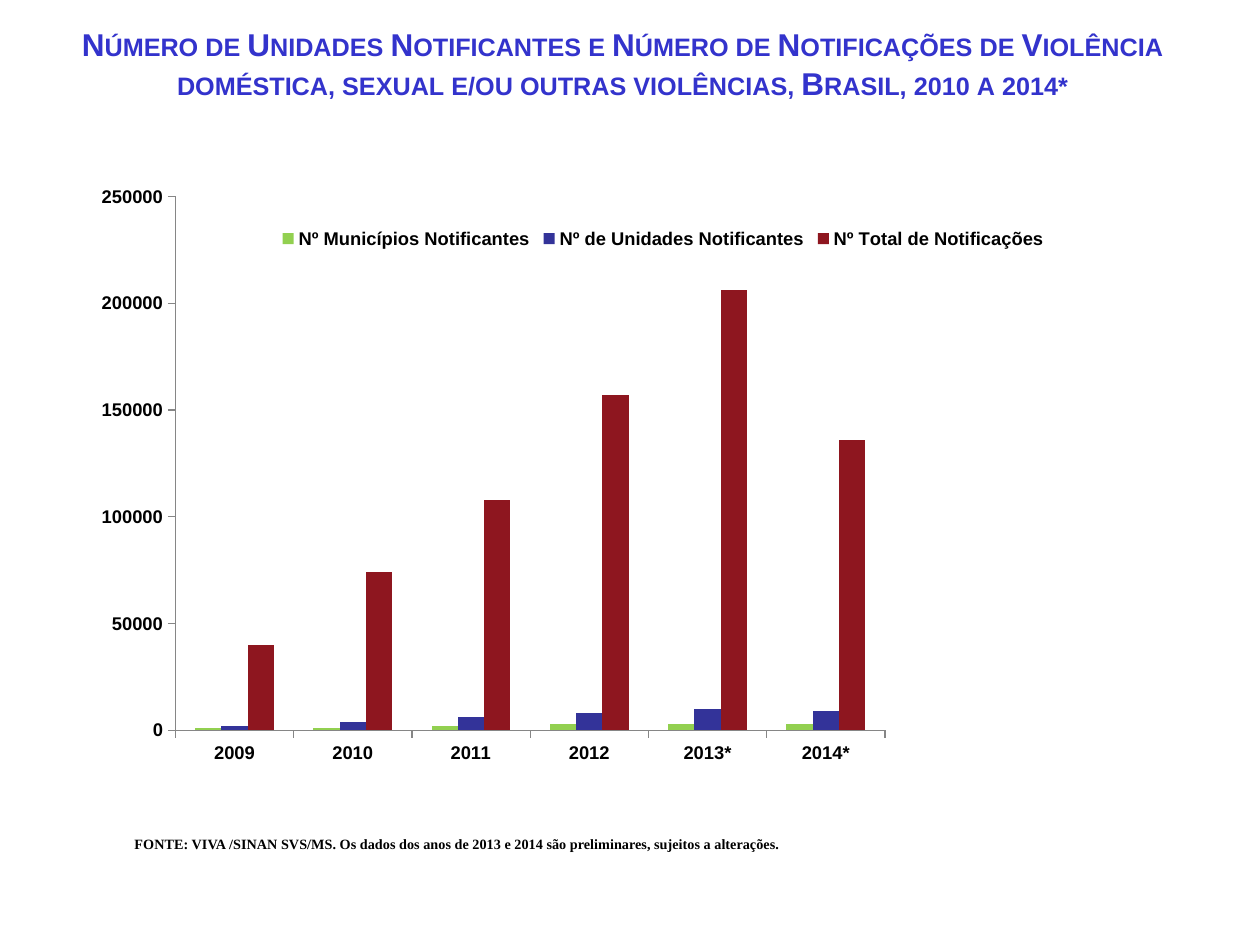
from lxml import etree
from pptx import Presentation
from pptx import util as u
from pptx.chart.data import CategoryChartData
from pptx.dml.color import RGBColor
from pptx.enum import chart as ch, text
from pptx.oxml.ns import qn

Pt = u.Pt
BLUE = RGBColor(0x33, 0x33, 0xCC)
BLACK = RGBColor(0, 0, 0)
GREY = RGBColor(0x86, 0x86, 0x86)
GREEN = RGBColor(0x92, 0xD0, 0x50)
INDIGO = RGBColor(0x33, 0x33, 0x99)
RED = RGBColor(0x8E, 0x16, 0x1F)

TITLE = ("Número de Unidades Notificantes e Número de Notificações de Violência "
         "doméstica, sexual e/ou outras violências, Brasil, 2010 a 2014*")
SOURCE = ("FONTE: VIVA /SINAN SVS/MS. Os dados dos anos de 2013 e 2014 são "
          "preliminares, sujeitos a alterações.")
YEARS = ["2009", "2010", "2011", "2012", "2013*", "2014*"]
SERIES = [
    ("Nº Municípios Notificantes", GREEN, (1000, 1000, 2000, 3000, 3000, 3000)),
    ("Nº de Unidades Notificantes", INDIGO, (2000, 4000, 6000, 8000, 10000, 9000)),
    ("Nº Total de Notificações", RED,
     (40000, 74000, 108000, 157000, 206000, 136000)),
]


def style_font(font, name, size, color):
    font.name, font.size, font.bold = name, Pt(size), True
    font.color.rgb = color


def add_text(s, box, words, align, name, size, color):
    """Add a one-paragraph text box and return its frame, paragraph and run."""
    tf = s.shapes.add_textbox(*map(Pt, box)).text_frame
    tf.word_wrap = True
    p = tf.paragraphs[0]
    p.text, p.alignment = words, align
    r = p.runs[0]
    style_font(r.font, name, size, color)
    return tf, p, r


def add_title(s, box):
    tf, p, r = add_text(s, box, TITLE, text.PP_ALIGN.CENTER, "Arial", 18, BLUE)
    p.line_spacing = 1.05
    r.font._element.set("cap", "small")


def add_source(s, box):
    tf, p, r = add_text(s, box, SOURCE, text.PP_ALIGN.JUSTIFY,
                        "Times New Roman", 14, BLACK)
    tf.word_wrap = False
    tf.vertical_anchor = text.MSO_ANCHOR.MIDDLE
    r.font._element.set("baseline", "30000")


def set_layout(parent, before, area, inner=False):
    """Place a chart part by fractions (x, y, w, h) of the chart area."""
    for old in parent.findall(qn("c:layout")):
        parent.remove(old)
    layout = etree.Element(qn("c:layout"))
    manual = etree.SubElement(layout, qn("c:manualLayout"))
    values = [("layoutTarget", "inner")] if inner else []
    values += [("xMode", "edge"), ("yMode", "edge"), *zip("xywh", area)]
    for tag, val in values:
        etree.SubElement(manual, qn("c:" + tag)).set("val", str(val))
    parent.find(qn(before)).addprevious(layout)


def add_notifications_chart(s, box):
    data = CategoryChartData(number_format="0")
    data.categories = YEARS
    for name, _, vals in SERIES:
        data.add_series(name, vals)
    chart = s.shapes.add_chart(ch.XL_CHART_TYPE.COLUMN_CLUSTERED,
                               *map(Pt, box), data).chart
    style_font(chart.font, "Arial", 10.5, BLACK)
    chart.has_title = False

    plot = chart.plots[0]
    plot.gap_width, plot.overlap, plot.vary_by_categories = 150, 0, False
    for series, (_, color, _) in zip(plot.series, SERIES):
        series.format.fill.solid()
        series.format.fill.fore_color.rgb = color
        series.invert_if_negative = False

    for axis in (chart.category_axis, chart.value_axis):
        axis.has_major_gridlines = False
        axis.major_tick_mark = ch.XL_TICK_MARK.OUTSIDE
        axis.format.line.color.rgb = GREY
        axis.format.line.width = Pt(0.75)
    values = chart.value_axis
    values.minimum_scale, values.maximum_scale, values.major_unit = 0, 250000, 50000
    values.tick_labels.number_format = "0"
    values.tick_labels.number_format_is_linked = False

    chart.has_legend = True
    legend = chart.legend
    legend.position = ch.XL_LEGEND_POSITION.TOP
    legend.include_in_layout = False
    set_layout(legend._element, "c:overlay", (0.18, 0.08, 0.7, 0.06))
    set_layout(plot._element.getparent(), "c:barChart",
               (0.09, 0.04, 0.64, 0.89), inner=True)


def main():
    prs = Presentation()
    prs.slide_width, prs.slide_height = Pt(720), Pt(540)
    s = prs.slides.add_slide(prs.slide_layouts[6])
    add_title(s, (32.4, 9.4, 646.6, 51))
    add_source(s, (69.8, 474.5, 444.2, 18.7))
    add_notifications_chart(s, (43.2, 98.6, 633.6, 342.7))
    prs.save("out.pptx")


if __name__ == "__main__":
    main()
